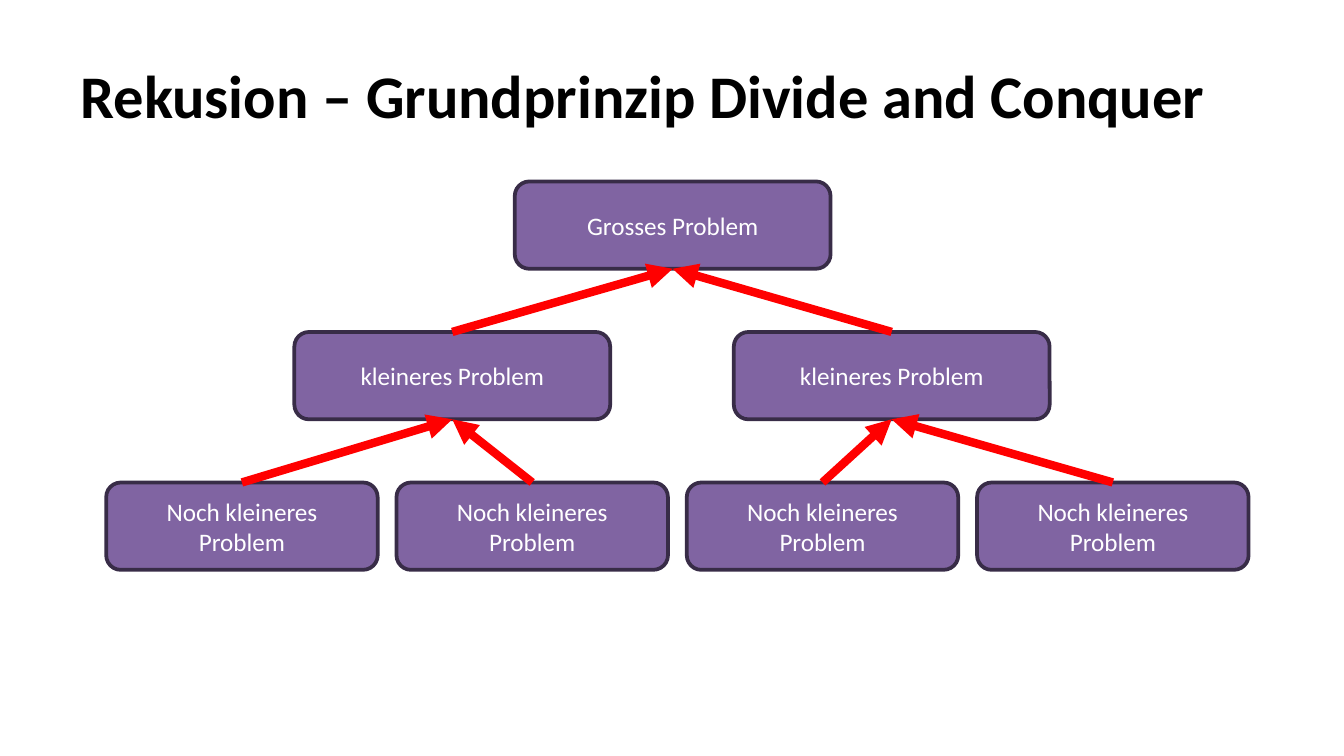
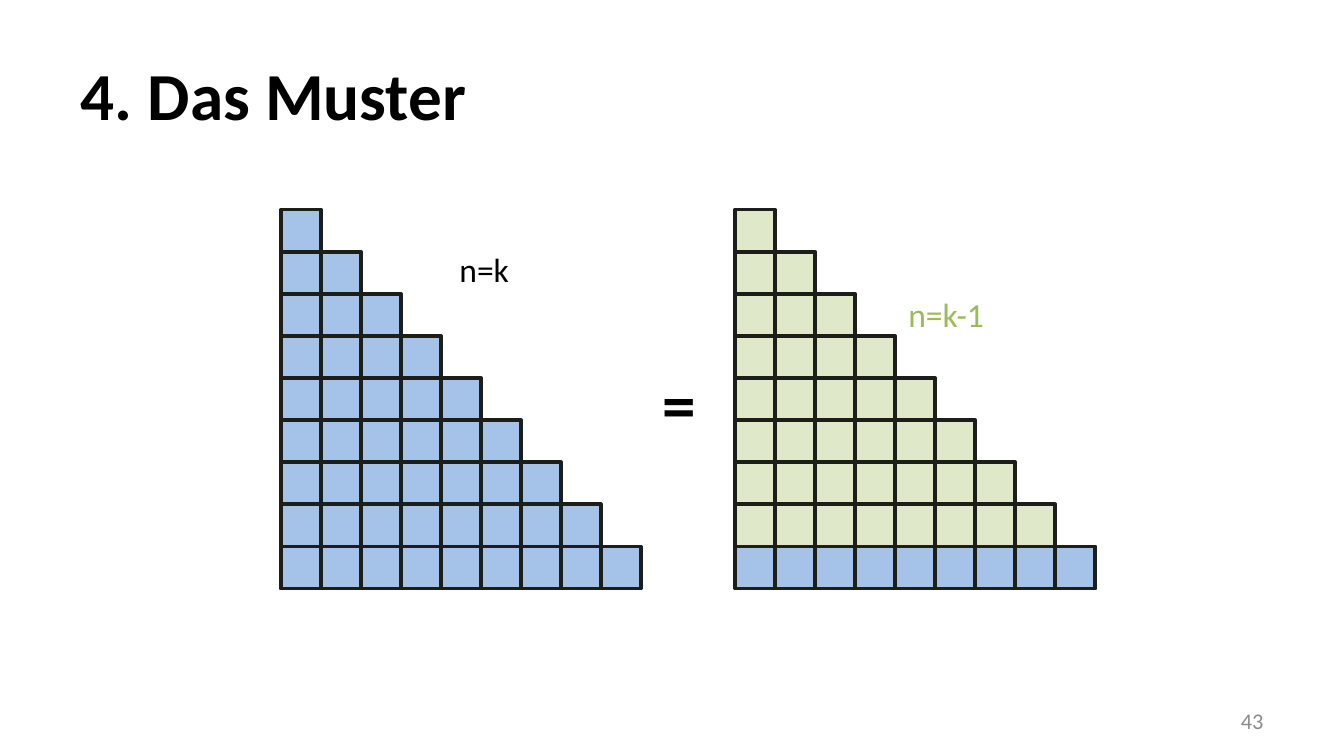
import dataclasses
import pptx
import pptx.dml.color
import pptx.enum.shapes
import pptx.enum.text
import pptx.oxml.ns
import pptx.util
from lxml import etree

Inches = pptx.util.Inches
Pt = pptx.util.Pt
Shape = pptx.enum.shapes.MSO_SHAPE
Align = pptx.enum.text.PP_ALIGN
Anchor = pptx.enum.text.MSO_ANCHOR
name = pptx.oxml.ns.qn


@dataclasses.dataclass(frozen=True)
class Theme:
    font: str = "Calibri"
    black: str = "000000"
    white: str = "FFFFFF"
    grey: str = "8C8C8C"
    purple: str = "8064A2"
    plum: str = "382C47"
    red: str = "FF0000"
    blue: str = "558ED5"
    green: str = "C3D69B"
    leaf: str = "9BBB59"
    edge: str = "1C1E19"
    alpha: int = 53
    head: float = 36
    label: float = 18
    node: float = 13.5
    foot: float = 12
    line: float = 2
    arrow: float = 4.5


THEME = Theme()


def color(code):
    return pptx.dml.color.RGBColor.from_string(code)


def write(shape, text, size, ink, bold=False, align=Align.LEFT, anchor=Anchor.MIDDLE):
    frame = shape.text_frame
    frame.text = text
    frame.word_wrap = True
    frame.vertical_anchor = anchor
    para = frame.paragraphs[0]
    para.alignment = align
    para.font.name = THEME.font
    para.font.size = Pt(size)
    para.font.bold = bold
    para.font.color.rgb = color(ink)


def label(slide, box, text, size, ink, **style):
    shape = slide.shapes.add_textbox(*map(Inches, box))
    write(shape, text, size, ink, **style)


def block(shapes, kind, box, fill, edge):
    shape = shapes.add_shape(kind, *map(Inches, box))
    shape.shadow.inherit = False
    shape.fill.solid()
    shape.fill.fore_color.rgb = color(fill)
    shape.line.color.rgb = color(edge)
    shape.line.width = Pt(THEME.line)
    return shape


def fade(shape):
    ink = shape._element.spPr.find(name("a:solidFill")).find(name("a:srgbClr"))
    etree.SubElement(ink, name("a:alpha"), val=str(THEME.alpha * 1000))


def arrow(slide, child, parent):
    link = slide.shapes.add_connector(pptx.enum.shapes.MSO_CONNECTOR.STRAIGHT, 0, 0, 0, 0)
    link.begin_connect(child, 0)
    link.end_connect(parent, 2)
    link.line.color.rgb = color(THEME.red)
    link.line.width = Pt(THEME.arrow)
    props = link._element.spPr
    etree.SubElement(props.find(name("a:ln")), name("a:tailEnd"), type="triangle")
    etree.SubElement(props, name("a:effectLst"))


def start(deck, text, size):
    slide = deck.slides.add_slide(deck.slide_layouts[5])
    title = slide.shapes.title
    title.left, title.top, title.width, title.height = map(Inches, (0.5, 0.23, 9, 0.94))
    write(title, text, size, THEME.black, bold=True)
    return slide


def tree(slide, left, top):
    levels = [
        ("Grosses Problem", 3.04, 2.35, 0),
        ("kleineres Problem", 1.4, 2.35, 3.27),
        ("Noch kleineres Problem", 0, 2.02, 2.16),
    ]
    rows = []
    for depth, (text, indent, width, pitch) in enumerate(levels):
        row = []
        for place in range(2 ** depth):
            box = (left + indent + place * pitch, top + depth * 1.12, width, 0.65)
            node = block(slide.shapes, Shape.ROUNDED_RECTANGLE, box, THEME.purple, THEME.plum)
            write(node, text, THEME.node, THEME.white, align=Align.CENTER)
            row.append(node)
        rows.append(row)
    for parents, children in zip(rows, rows[1:]):
        for place, child in enumerate(children):
            arrow(slide, child, parents[place // 2])


def stairs(slide, box, fill, first, last, count=9):
    left, top, width, height = box
    wide, high = width / count, height / count
    group = slide.shapes.add_group_shape()
    for row in range(first, last):
        for col in range(row + 1):
            cell = (left + col * wide, top + row * high, wide, high)
            fade(block(group.shapes, Shape.RECTANGLE, cell, fill, THEME.edge))


def divide(deck):
    slide = start(deck, "Rekusion – Grundprinzip Divide and Conquer", THEME.head * 0.9)
    tree(slide, 0.79, 1.35)


def pattern(deck):
    slide = start(deck, "4. Das Muster", THEME.head)
    label(slide, (7.17, 5.21, 2.33, 0.3), "43", THEME.foot, THEME.grey, align=Align.RIGHT)
    top, width, height = 1.56, 2.68, 2.82
    whole = (2.09, top, width, height)
    split = (5.47, top, width, height)
    stairs(slide, whole, THEME.blue, 0, 9)
    label(slide, (4.83, 2.65, 0.43, 0.71), "=", THEME.head, THEME.black,
          bold=True, anchor=Anchor.TOP)
    stairs(slide, split, THEME.green, 0, 8)
    stairs(slide, split, THEME.blue, 8, 9)
    label(slide, (3.32, 1.8, 0.63, 0.4), "n=k", THEME.label, THEME.black, anchor=Anchor.TOP)
    label(slide, (6.66, 2.14, 0.91, 0.4), "n=k-1", THEME.label, THEME.leaf, anchor=Anchor.TOP)


def main():
    deck = pptx.Presentation()
    deck.slide_width = Inches(10)
    deck.slide_height = Inches(10 * 9 / 16)
    divide(deck)
    pattern(deck)
    deck.save("out.pptx")


if __name__ == "__main__":
    main()
